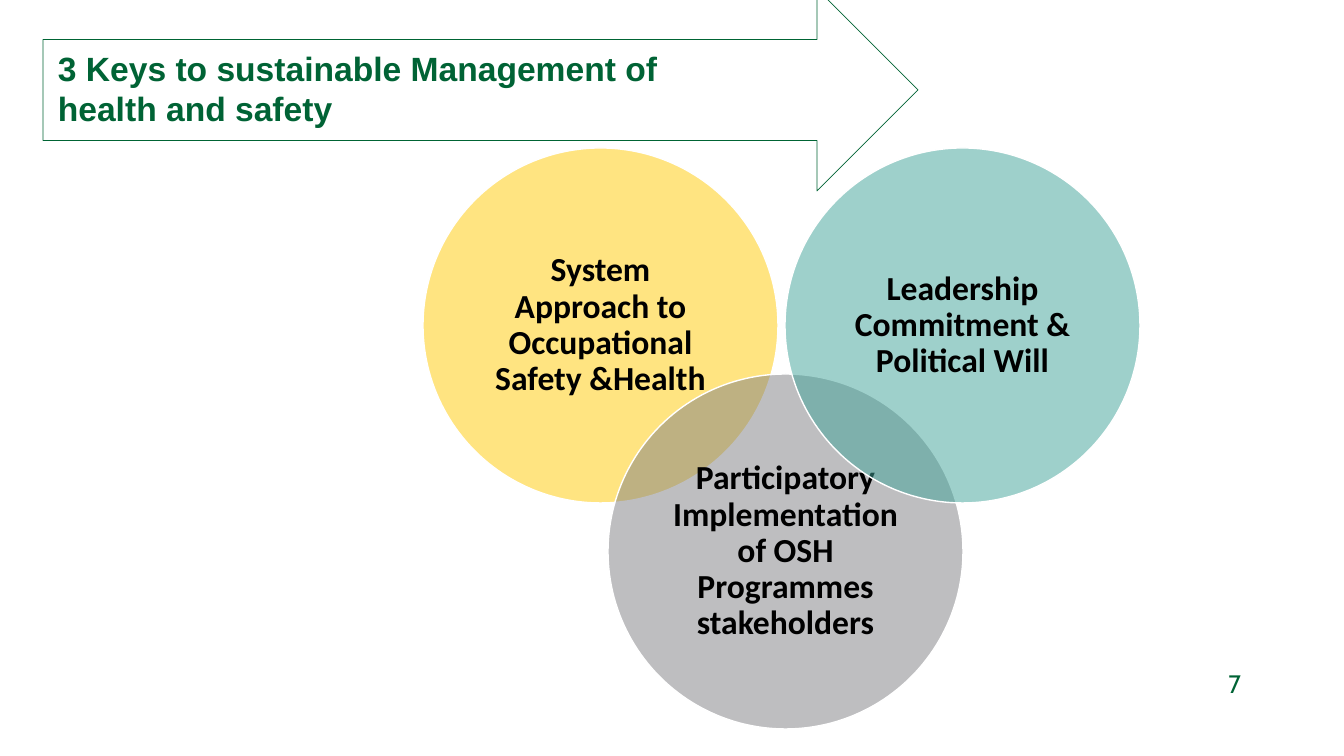
from lxml import etree
from pptx import Presentation
from pptx.dml.color import RGBColor
from pptx.enum.shapes import MSO_SHAPE as Shape
from pptx.enum.text import MSO_ANCHOR as Anchor, PP_ALIGN as Align
from pptx.oxml.ns import qn
from pptx.util import Pt

PX = 914400 / 100.8  # EMU per px
GREEN = "006335"


def px(*lengths):
    return [round(length * PX) for length in lengths]


def color(hex_string):
    return RGBColor.from_string(hex_string)


deck = Presentation()
deck.slide_width, deck.slide_height = px(1344, 756)
slide = deck.slides.add_slide(deck.slide_layouts[6])

# Slide number
number = slide.shapes.add_textbox(*px(933, 666, 318, 35)).text_frame
number.word_wrap = True
number.vertical_anchor = Anchor.MIDDLE
number.text = "7"
digit = number.paragraphs[0]
digit.alignment = Align.RIGHT
digit.font.name, digit.font.size = "Cabin", Pt(18)
digit.font.color.rgb = color(GREEN)

# Three overlapping translucent keys
DIAMETER = 355
keys = [
    (423, 148, "FFCB05", "System Approach to Occupational Safety &Health"),
    (608, 374, "7E7F83", "Participatory Implementation of OSH Programmes stakeholders"),
    (785, 148, "3FA399", "Leadership Commitment & Political Will"),
]
for left, top, tint, wording in keys:
    circle = slide.shapes.add_shape(Shape.OVAL, *px(left, top, DIAMETER, DIAMETER))
    circle.shadow.inherit = False
    circle.fill.solid()
    circle.fill.fore_color.rgb = color(tint)
    tint_xml = circle.fill._xPr.find(qn("a:solidFill"))[0]
    etree.SubElement(tint_xml, qn("a:alpha")).set("val", "50000")
    circle.line.color.rgb = color("FFFFFF")
    circle.line.width = Pt(1)

    label = circle.text_frame
    label.word_wrap = True
    label.vertical_anchor = Anchor.MIDDLE
    label.margin_left, label.margin_top, label.margin_right, label.margin_bottom = px(10, 10, 10, 10)
    label.text = wording
    line = label.paragraphs[0]
    line.alignment = Align.CENTER
    line.line_spacing = 0.9
    line.font.name, line.font.size, line.font.bold = "Calibri", Pt(24), True
    line.font.color.rgb = color("000000")

# Title arrow
arrow = slide.shapes.add_shape(Shape.RIGHT_ARROW, *px(43, -11, 875, 202))
arrow.shadow.inherit = False
arrow.fill.solid()
arrow.fill.fore_color.rgb = color("FFFFFF")
arrow.line.color.rgb = color("006434")
arrow.line.width = Pt(0.5)

# Title
title = slide.shapes.add_textbox(*px(48, 43, 699, 92)).text_frame
title.word_wrap = True
title.text = "3 Keys to sustainable Management of health and safety"
heading = title.paragraphs[0]
heading.font.name, heading.font.size, heading.font.bold = "Arial", Pt(24), True
heading.font.color.rgb = color(GREEN)

deck.save("out.pptx")
